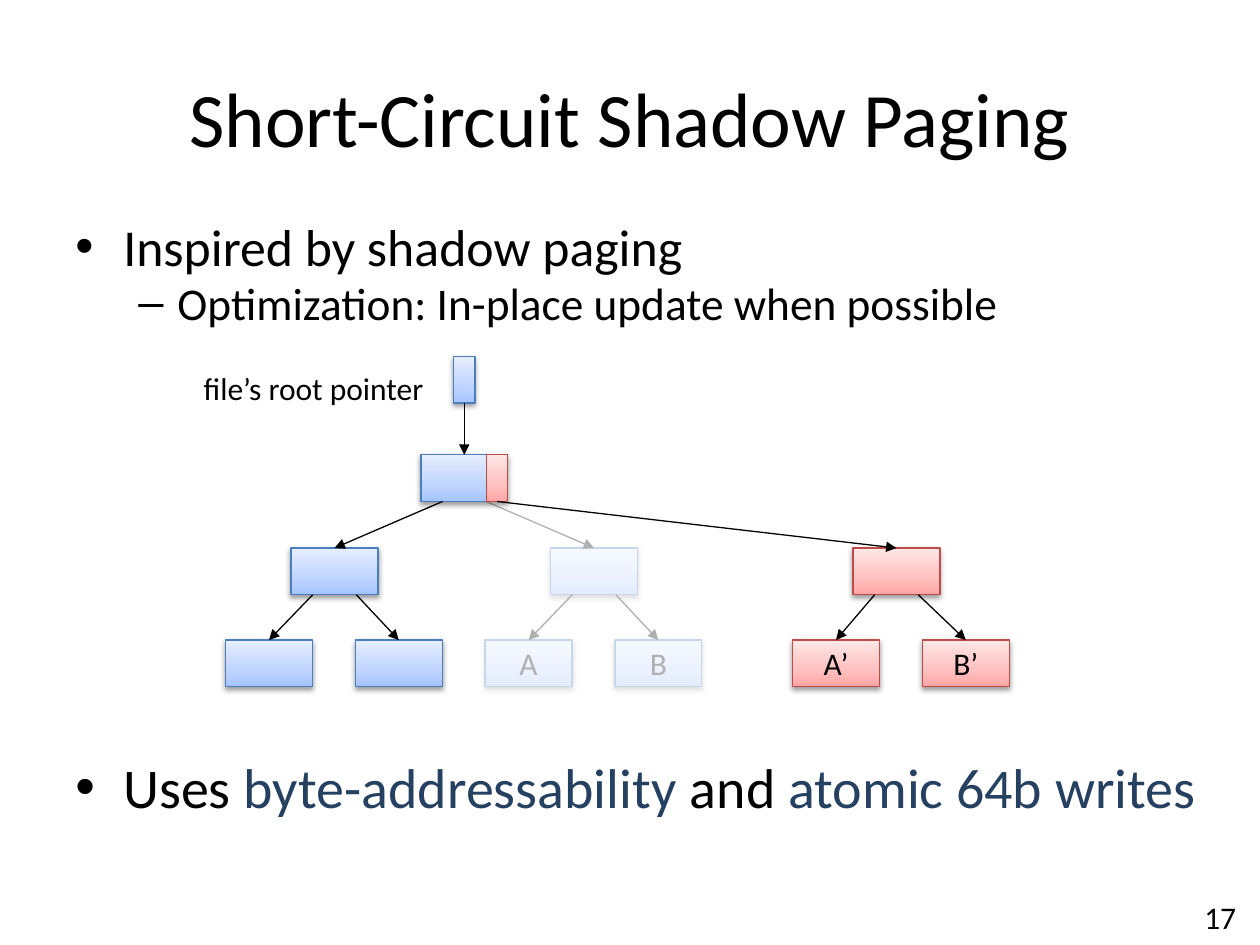
from copy import deepcopy

from lxml import etree
from pptx import Presentation
from pptx.dml.color import RGBColor
from pptx.enum.shapes import MSO_CONNECTOR, MSO_SHAPE
from pptx.enum.text import MSO_ANCHOR, PP_ALIGN
from pptx.oxml.ns import qn
from pptx.util import Inches, Pt

RECTANGLE = MSO_SHAPE.RECTANGLE
STRAIGHT = MSO_CONNECTOR.STRAIGHT
MIDDLE = MSO_ANCHOR.MIDDLE
LEFT, CENTER, RIGHT = PP_ALIGN.LEFT, PP_ALIGN.CENTER, PP_ALIGN.RIGHT
TOP_SIDE, BOTTOM_SIDE = 0, 2

FONT = "Calibri"
BLACK, WHITE, NAVY = "000000", "FFFFFF", "254061"
BLUE = {"line": "4B7EBC", "stops": ((0, "A4C4FF"), (0.35, "BFD4FF"), (1, "E6EEFF"))}
RED = {"line": "BF4C48", "stops": ((0, "FFA6A5"), (0.35, "FFC0BF"), (1, "FFE7E7"))}
NODE_WIDTH, NODE_HEIGHT, SLOT_WIDTH = 0.69, 0.37, 0.17
LEAF_STEP = 1.03
LEAF_DROP = 0.73


def rgb(color):
    """Turn a hex string into a colour."""
    return RGBColor.from_string(color)


def add_xml(parent, tag, **attributes):
    """Append a DrawingML element and return it."""
    values = {name: str(value) for name, value in attributes.items()}
    return etree.SubElement(parent, qn(tag), values)


def format_run(run, size, color=BLACK):
    """Set the font, size and colour of a run."""
    run.font.name = FONT
    run.font.size = Pt(size)
    run.font.color.rgb = rgb(color)


def add_text_box(slide, box, wrap=True):
    """Add an empty text box and return its text frame."""
    text_frame = slide.shapes.add_textbox(*map(Inches, box)).text_frame
    text_frame.word_wrap = wrap
    return text_frame


def add_label(slide, box, text, wrap=True):
    """Add a right-aligned one-line label."""
    paragraph = add_text_box(slide, box, wrap).paragraphs[0]
    paragraph.text = text
    paragraph.alignment = RIGHT
    format_run(paragraph.runs[0], 18)


def add_bullet(paragraph, pieces, size, bullet, margin, indent, level=0):
    """Fill a bulleted paragraph with (text, colour) pieces."""
    paragraph.level = level
    paragraph.alignment = LEFT
    paragraph.space_before = Pt(round(size * 0.2, 1))
    for text, color in pieces:
        run = paragraph.add_run()
        run.text = text
        format_run(run, size, color)
    properties = paragraph._p.get_or_add_pPr()
    properties.set("marL", str(Inches(margin)))
    properties.set("indent", str(Inches(-indent)))
    add_xml(properties, "a:buFont", typeface="Arial")
    add_xml(properties, "a:buChar", char=bullet)


def add_node(slide, left, top, palette, text="", width=NODE_WIDTH, shadow=True):
    """Add a gradient block of the tree."""
    box = (left, top, width, NODE_HEIGHT)
    node = slide.shapes.add_shape(RECTANGLE, *map(Inches, box))
    node.fill.gradient()
    node.fill.gradient_angle = 90
    stop_list = node._element.spPr.find(".//" + qn("a:gsLst"))
    stop_list.append(deepcopy(stop_list[0]))
    for stop, (position, color) in zip(node.fill.gradient_stops, palette["stops"]):
        stop.position = position
        stop.color.rgb = rgb(color)
    node.line.color.rgb = rgb(palette["line"])
    node.line.width = Pt(0.75)
    node.shadow.inherit = False
    if shadow:
        effects = node._element.spPr.find(qn("a:effectLst"))
        outer = add_xml(effects, "a:outerShdw", blurRad=Pt(3.1), dist=Pt(1.6),
                        dir=5400000, rotWithShape=0)
        add_xml(add_xml(outer, "a:srgbClr", val=BLACK), "a:alpha", val=38000)
    if text:
        node.text_frame.text = text
        node.text_frame.vertical_anchor = MIDDLE
        paragraph = node.text_frame.paragraphs[0]
        paragraph.alignment = CENTER
        format_run(paragraph.runs[0], 18)
    return node


def add_arrow(slide, source, target, fraction=0.5):
    """Point from a fraction along the source's bottom to the target's top."""
    start = source.left + int(source.width * fraction)
    arrow = slide.shapes.add_connector(
        STRAIGHT, start, source.top + source.height,
        target.left + target.width // 2, target.top)
    if fraction == 0.5:
        arrow.begin_connect(source, BOTTOM_SIDE)
    arrow.end_connect(target, TOP_SIDE)
    arrow.line.color.rgb = rgb(BLACK)
    arrow.line.width = Pt(0.75)
    add_xml(arrow.line._get_or_add_ln(), "a:tailEnd", type="triangle")
    add_xml(arrow._element.spPr, "a:effectLst")


def add_subtree(slide, left, top, palette, labels=("", ""), parent_offset=0.52):
    """Add a parent with two leaves and return the parent."""
    parent = add_node(slide, left + parent_offset, top, palette)
    for index, label in enumerate(labels):
        leaf = add_node(slide, left + index * LEAF_STEP, top + LEAF_DROP, palette, label)
        add_arrow(slide, parent, leaf, 0.25 + 0.5 * index)
    return parent


def add_veil(slide, box):
    """Cover the replaced subtree with translucent white."""
    veil = slide.shapes.add_shape(RECTANGLE, *map(Inches, box))
    veil.fill.solid()
    veil.fill.fore_color.rgb = rgb(WHITE)
    add_xml(veil._element.spPr.find(".//" + qn("a:srgbClr")), "a:alpha", val=69000)
    veil.line.fill.background()
    veil.shadow.inherit = False


def add_tree(slide, left, top):
    """Draw the paged file tree with its old and new branches."""
    root_left, root_top = left + 1.55, top + 0.78
    level_top = top + 1.52
    root = add_node(slide, root_left, root_top, BLUE)
    old_branch = add_subtree(slide, left + 2.06, level_top, BLUE, ("A", "B"))
    add_arrow(slide, root, old_branch, 0.75)
    add_veil(slide, (left + 1.81, top + 1.12, 2.2, 1.72))

    kept_branch = add_subtree(slide, left, level_top, BLUE)
    new_branch = add_subtree(slide, left + 4.5, level_top, RED, ("A’", "B’"), 0.48)
    pointer = add_node(slide, left + 1.81, top, BLUE, width=SLOT_WIDTH)
    add_label(slide, (left - 0.3, top + 0.05, 1.97, 0.4), "file’s root pointer", False)

    slide.shapes._spTree.append(root._element)
    new_slot = add_node(slide, root_left + NODE_WIDTH - SLOT_WIDTH, root_top, RED,
                        width=SLOT_WIDTH, shadow=False)
    add_arrow(slide, root, kept_branch, 0.25)
    add_arrow(slide, pointer, root)
    add_arrow(slide, new_slot, new_branch)


def add_title(slide, box, text):
    """Place and format the title placeholder."""
    title = slide.shapes.title
    title.left, title.top, title.width, title.height = map(Inches, box)
    title.text_frame.text = text
    title.text_frame.vertical_anchor = MIDDLE
    paragraph = title.text_frame.paragraphs[0]
    paragraph.alignment = CENTER
    format_run(paragraph.runs[0], 44)


def add_introduction(slide, box):
    """Add the opening bullet and its sub-bullet."""
    text_frame = add_text_box(slide, box)
    first, second = text_frame.paragraphs[0], text_frame.add_paragraph()
    first.line_spacing = second.line_spacing = 0.8
    add_bullet(first, [("Inspired by shadow paging", BLACK)], 29.6, "•", 0.38, 0.38)
    add_bullet(second, [("Optimization: In-place update when possible", BLACK)],
               25.9, "–", 0.81, 0.31, 1)


def add_conclusion(slide, box):
    """Add the closing bullet with its highlighted terms."""
    pieces = [("Uses ", BLACK), ("byte-addressability", NAVY),
              (" and ", BLACK), ("atomic 64b writes", NAVY)]
    add_bullet(add_text_box(slide, box).paragraphs[0], pieces, 32, "•", 0.38, 0.38)


def main():
    """Build and save the slide."""
    presentation = Presentation()
    presentation.slide_width, presentation.slide_height = Inches(10), Inches(7.5)
    slide = presentation.slides.add_slide(presentation.slide_layouts[5])
    add_title(slide, (0.5, 0.3, 9, 1.25), "Short-Circuit Shadow Paging")
    add_introduction(slide, (0.5, 1.75, 9.42, 1))
    add_tree(slide, 1.79, 2.83)
    add_conclusion(slide, (0.5, 5.92, 9.42, 1.17))
    add_label(slide, (7.58, 7.08, 2.33, 0.4), "17")
    presentation.save("out.pptx")


if __name__ == "__main__":
    main()
